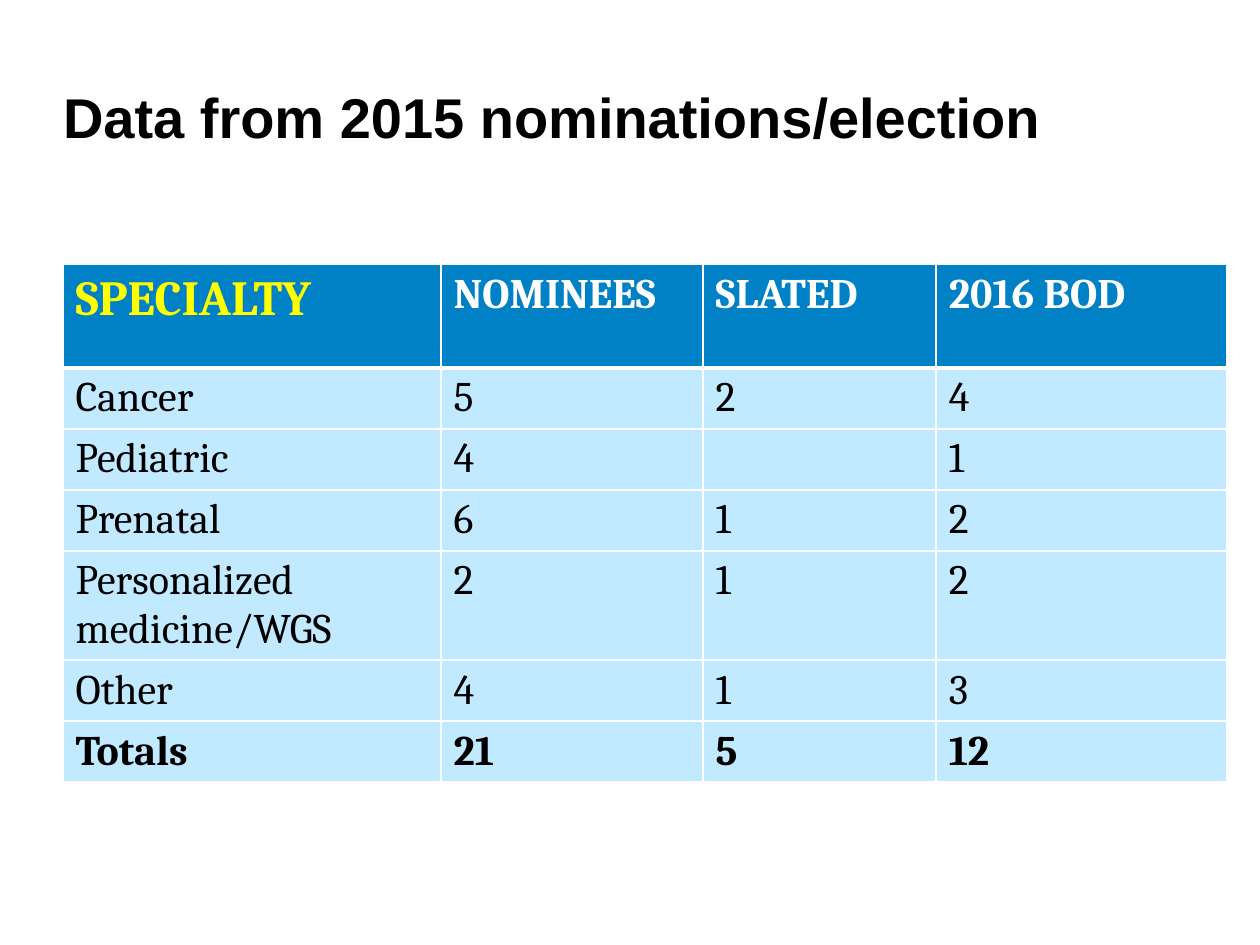
from pptx import Presentation
from pptx.dml.color import RGBColor
from pptx.enum.text import MSO_ANCHOR, PP_ALIGN
from pptx.oxml import parse_xml
from pptx.oxml.ns import nsdecls
from pptx.util import Inches, Pt

COLORS = {"header": "0081C6", "body": "C1E9FF", "accent": "FFFF00",
          "light": "FFFFFF", "dark": "000000"}
HEADINGS = ["SPECIALTY", "NOMINEES", "SLATED", "2016 BOD"]
RESULTS = [
    ["Cancer", "5", "2", "4"],
    ["Pediatric", "4", "", "1"],
    ["Prenatal", "6", "1", "2"],
    ["Personalized medicine/WGS", "2", "1", "2"],
    ["Other", "4", "1", "3"],
    ["Totals", "21", "5", "12"],
]
COLUMN_WIDTHS = [3, 2.08, 1.85, 2.31]
ROW_HEIGHT = 0.41


class SlideBuilder:
    """Holds the style and the current slide, and adds its elements."""

    def __init__(self, deck):
        self.page = deck.slides.add_slide(deck.slide_layouts[5])
        self.width, self.height = deck.slide_width, deck.slide_height

    def place(self, left, top, width, height):
        return (round(self.width * left), round(self.height * top),
                round(self.width * width), round(self.height * height))

    def add_text(self, para, text, font, size, color, bold):
        span = para.add_run()
        span.text = text
        span.font.name, span.font.size, span.font.bold = font, Pt(size), bold
        span.font.color.rgb = RGBColor.from_string(COLORS[color])

    def title(self, text, area):
        box = self.page.shapes.title
        box.left, box.top, box.width, box.height = self.place(*area)
        box.text_frame.vertical_anchor = MSO_ANCHOR.MIDDLE
        para = box.text_frame.paragraphs[0]
        para.alignment, para.line_spacing = PP_ALIGN.LEFT, 0.8
        self.add_text(para, text, "Arial", 32, "dark", True)

    def borders(self, cell, top, bottom):
        properties = cell._tc.get_or_add_tcPr()
        sides = {"L": 1, "R": 1, "T": top, "B": bottom}
        for index, (side, points) in enumerate(sides.items()):
            properties.insert(index, parse_xml(
                f'<a:ln{side} {nsdecls("a")} w="{Pt(points)}"><a:solidFill>'
                f'<a:srgbClr val="{COLORS["light"]}"/></a:solidFill></a:ln{side}>'))

    def cell(self, cell, text, row, column, last):
        header = row == 0
        cell.fill.solid()
        cell.fill.fore_color.rgb = RGBColor.from_string(COLORS["header" if header else "body"])
        self.borders(cell, 3 if row == 1 else 1, 3 if header else 1)
        if text:
            corner = header and column == 0
            color = "accent" if corner else "light" if header else "dark"
            self.add_text(cell.text_frame.paragraphs[0], text, "Cambria",
                          28 if corner else 24, color, header or row == last)

    def table(self, rows, area):
        table = self.page.shapes.add_table(len(rows), len(rows[0]), *self.place(*area)).table
        for column, width in zip(table.columns, COLUMN_WIDTHS):
            column.width = Inches(width)
        for index, row in enumerate(table.rows):
            row.height = Inches(ROW_HEIGHT * (2 if index == 0 else 1))
        for r, texts in enumerate(rows):
            for c, text in enumerate(texts):
                self.cell(table.cell(r, c), text, r, c, len(rows) - 1)


def main():
    deck = Presentation()
    deck.slide_width, deck.slide_height = Inches(10), Inches(7.5)
    builder = SlideBuilder(deck)
    builder.title("Data from 2015 nominations/election", (0.04, 0.08, 0.93, 0.1))
    builder.table([HEADINGS] + RESULTS, (0.05, 0.28, 0.93, 0.44))
    deck.save("out.pptx")


if __name__ == "__main__":
    main()
